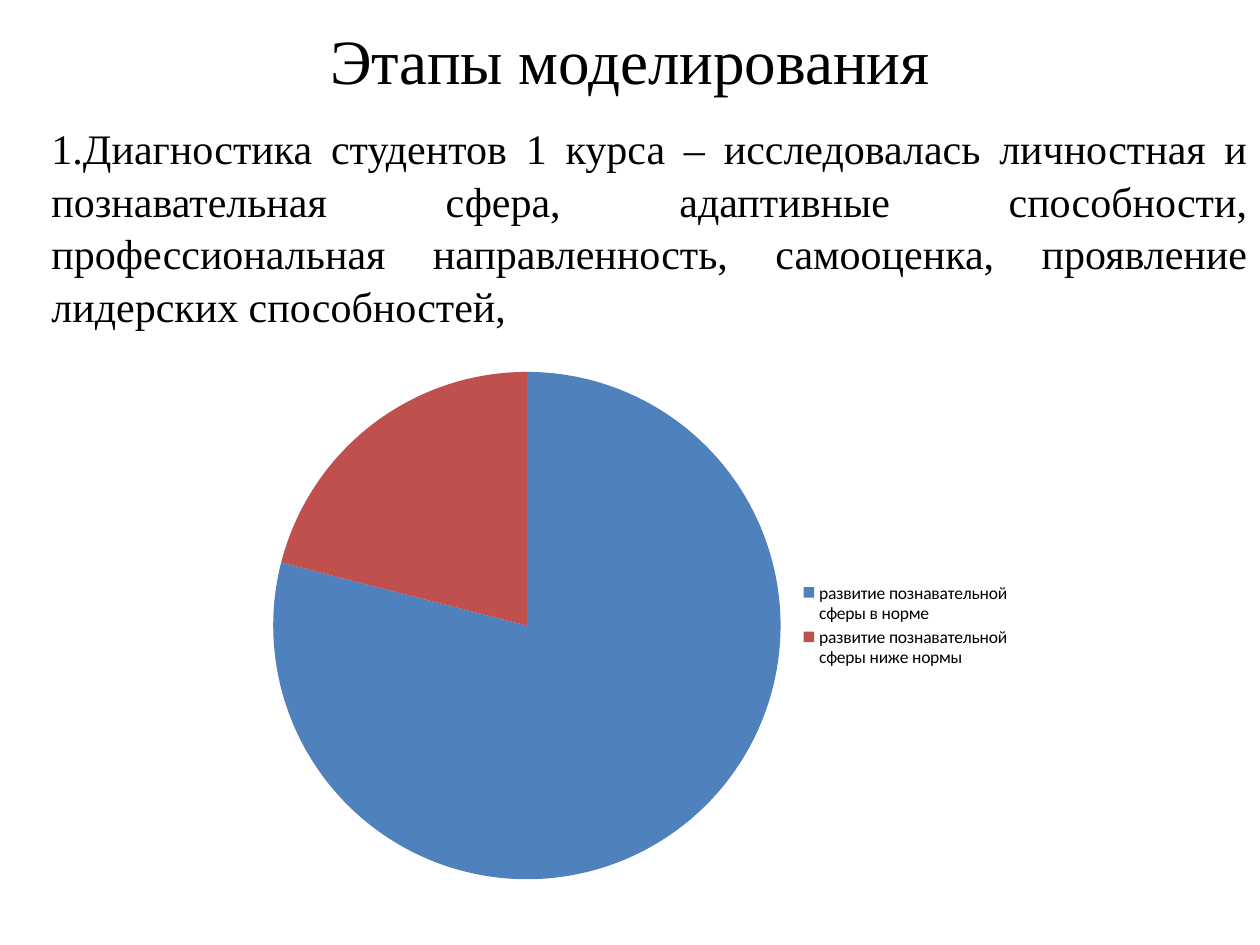
from pptx import Presentation
from pptx.chart.data import CategoryChartData
from pptx.dml.color import RGBColor
from pptx.enum import chart as ch, text
from pptx.util import Pt

BLACK = RGBColor(0, 0, 0)
BLUE = RGBColor(0x4F, 0x81, 0xBD)
RED = RGBColor(0xC0, 0x50, 0x4D)
SERIF = "Times New Roman"
SANS = "Calibri"

TITLE = "Этапы моделирования"
DIAGNOSTICS = (
    "1.Диагностика студентов 1 курса – исследовалась личностная и "
    "познавательная сфера, адаптивные способности, профессиональная "
    "направленность, самооценка, проявление лидерских способностей,"
)
SHARES = {
    "развитие познавательной сферы в норме": (79, BLUE),
    "развитие познавательной сферы ниже нормы": (21, RED),
}


def set_font(font, name, size):
    font.name, font.size = name, Pt(size)
    font.color.rgb = BLACK


def add_title(slide, left, top, width, height):
    sp = slide.shapes.title
    sp.left, sp.top, sp.width, sp.height = map(Pt, (left, top, width, height))
    tf = sp.text_frame
    tf.text = TITLE
    tf.vertical_anchor = text.MSO_ANCHOR.MIDDLE
    p = tf.paragraphs[0]
    p.alignment = text.PP_ALIGN.CENTER
    set_font(p.font, SERIF, 36)


def add_diagnostics(slide, left, top, width, height):
    sp = slide.shapes.add_textbox(*map(Pt, (left, top, width, height)))
    tf = sp.text_frame
    tf.word_wrap = True
    tf.margin_top = Pt(5)
    tf.text = DIAGNOSTICS
    p = tf.paragraphs[0]
    p.alignment = text.PP_ALIGN.JUSTIFY
    p.line_spacing = 1.05
    set_font(p.font, SERIF, 24)


def add_shares_pie(slide, left, top, width, height):
    data = CategoryChartData()
    data.categories = SHARES
    data.add_series("Series 1", [value for value, _ in SHARES.values()])
    frame = slide.shapes.add_chart(
        ch.XL_CHART_TYPE.PIE, *map(Pt, (left, top, width, height)), data)
    chart = frame.chart
    chart.has_title = False
    set_font(chart.font, SANS, 10)
    chart.has_legend = True
    chart.legend.position = ch.XL_LEGEND_POSITION.RIGHT
    chart.legend.include_in_layout = False
    plot = chart.plots[0]
    plot.vary_by_categories = True
    for i, (_, color) in enumerate(SHARES.values()):
        fill = plot.series[0].points[i].format.fill
        fill.solid()
        fill.fore_color.rgb = color


def main():
    prs = Presentation()
    prs.slide_width, prs.slide_height = Pt(720), Pt(540)
    slide = prs.slides.add_slide(prs.slide_layouts[5])
    add_diagnostics(slide, 22.3, 63.4, 697.7, 147.6)
    add_title(slide, 36, 0, 648, 67.7)
    add_shares_pie(slide, 146.2, 185.8, 438.5, 343.4)
    prs.save("out.pptx")


if __name__ == "__main__":
    main()
